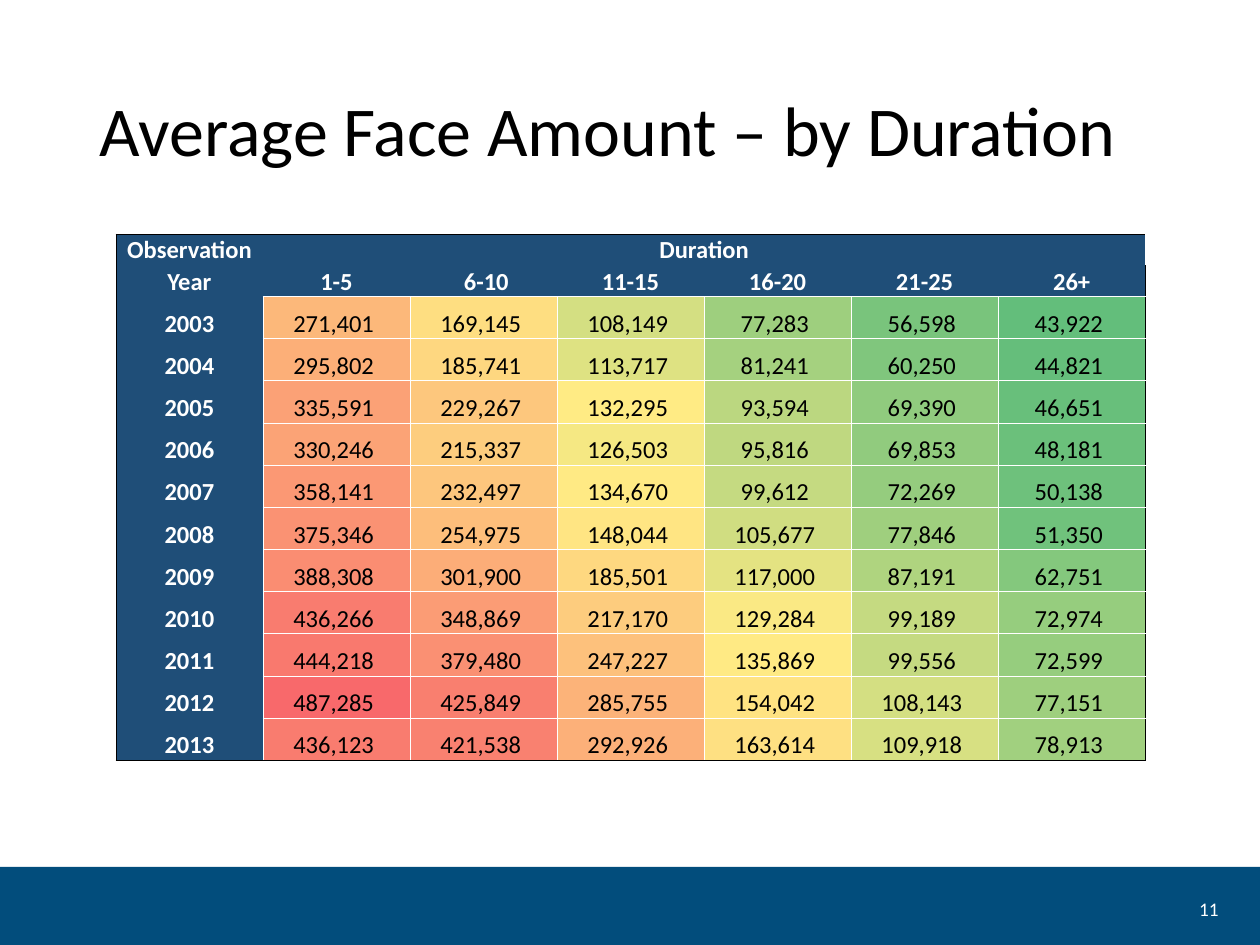
from lxml import etree
from pptx import Presentation
from pptx import util as u
from pptx.dml.color import RGBColor
from pptx.enum import shapes, text
from pptx.oxml.ns import qn

NAVY, BLACK, WHITE = "1F4E78", "000000", "FFFFFF"
# Colour scale for the amounts: lowest, middle and highest
LOW, MIDDLE, HIGH = (43922, "63BE7B"), (132295, "FFEB84"), (487285, "F8696B")
DURATIONS = ["1-5", " 6-10", "11-15", "16-20", "21-25", "26+"]
AMOUNTS = {
    2003: [271401, 169145, 108149, 77283, 56598, 43922],
    2004: [295802, 185741, 113717, 81241, 60250, 44821],
    2005: [335591, 229267, 132295, 93594, 69390, 46651],
    2006: [330246, 215337, 126503, 95816, 69853, 48181],
    2007: [358141, 232497, 134670, 99612, 72269, 50138],
    2008: [375346, 254975, 148044, 105677, 77846, 51350],
    2009: [388308, 301900, 185501, 117000, 87191, 62751],
    2010: [436266, 348869, 217170, 129284, 99189, 72974],
    2011: [444218, 379480, 247227, 135869, 99556, 72599],
    2012: [487285, 425849, 285755, 154042, 108143, 77151],
    2013: [436123, 421538, 292926, 163614, 109918, 78913],
}


def rgb(value):
    return RGBColor.from_string(value)


def heat_colour(amount):
    """Blend the colour scale's two stops on either side of the amount."""
    (start, first), (end, last) = (LOW, MIDDLE) if amount < MIDDLE[0] else (MIDDLE, HIGH)
    share = (amount - start) / (end - start)
    mixed = [round(a + (b - a) * share) for a, b in zip(rgb(first), rgb(last))]
    return str(RGBColor(*mixed))


presentation = Presentation()
presentation.slide_width, presentation.slide_height = u.Inches(10), u.Inches(7.5)
slide = presentation.slides.add_slide(presentation.slide_layouts[5])

# Footer band
band = slide.shapes.add_shape(
    shapes.MSO_SHAPE.RECTANGLE, 0, u.Inches(6.88), u.Inches(10), u.Inches(0.62))
band.shadow.inherit = False
band.fill.solid()
band.fill.fore_color.rgb = rgb("024D7C")
band.line.fill.background()

# Title
title = slide.shapes.title
title.left, title.top = u.Inches(0.69), u.Inches(0.36)
title.width, title.height = u.Inches(8.62), u.Inches(1.4)
title.text_frame.text = "Average Face Amount – by Duration"
title.text_frame.vertical_anchor = text.MSO_ANCHOR.MIDDLE
paragraph = title.text_frame.paragraphs[0]
paragraph.alignment = text.PP_ALIGN.LEFT
paragraph.line_spacing = 0.9
paragraph.font.size = u.Pt(40)
paragraph.font.name = "Calibri"
paragraph.font.color.rgb = rgb(BLACK)

# Table
rows = [["Observation", "Duration"] + [""] * 5, ["Year"] + DURATIONS]
rows += [[str(year)] + amounts for year, amounts in AMOUNTS.items()]
last_row, last_column = len(rows) - 1, len(DURATIONS)
table = slide.shapes.add_table(
    len(rows), last_column + 1,
    u.Inches(0.92), u.Inches(1.86), u.Inches(8.17), u.Inches(4.17)).table
for column in table.columns:
    column.width = u.Inches(8.17 / 7)
for r, row in enumerate(table.rows):
    row.height = u.Inches(0.23 if r < 2 else 0.335)
table.cell(0, 1).merge(table.cell(0, last_column))

for r, values in enumerate(rows):
    for c, value in enumerate(values):
        cell = table.cell(r, c)
        is_amount = r > 1 and c > 0
        cell.margin_left = cell.margin_right = cell.margin_top = u.Inches(0.01)
        cell.margin_bottom = 0
        cell.vertical_anchor = text.MSO_ANCHOR.BOTTOM

        # Black outline, white grid around the amounts, nothing inside the headers
        sides = {
            "lnL": (c == 0, is_amount),
            "lnR": (c == last_column, r > 1),
            "lnT": (r == 0, is_amount),
            "lnB": (r == last_row, is_amount or (r == 1 and c > 0)),
        }
        for tag, (on_outline, on_grid) in sides.items():
            border = etree.SubElement(cell._tc.get_or_add_tcPr(), qn(f"a:{tag}"), w=str(u.Pt(0.5)))
            if on_outline or on_grid:
                fill = etree.SubElement(border, qn("a:solidFill"))
                etree.SubElement(fill, qn("a:srgbClr"), val=BLACK if on_outline else WHITE)
            else:
                etree.SubElement(border, qn("a:noFill"))

        cell.fill.solid()
        cell.fill.fore_color.rgb = rgb(heat_colour(value) if is_amount else NAVY)
        cell.text_frame.text = f"{value:,} " if is_amount else value
        paragraph = cell.text_frame.paragraphs[0]
        paragraph.alignment = text.PP_ALIGN.CENTER
        paragraph.font.size = u.Pt(14)
        paragraph.font.name = "Calibri"
        paragraph.font.bold = not is_amount
        paragraph.font.color.rgb = rgb(BLACK if is_amount else WHITE)

# Slide number
number = slide.shapes.add_textbox(
    u.Inches(9.24), u.Inches(7.1), u.Inches(0.53), u.Inches(0.22))
number.text_frame.word_wrap = True
number.text_frame.vertical_anchor = text.MSO_ANCHOR.MIDDLE
number.text_frame.text = "11"
paragraph = number.text_frame.paragraphs[0]
paragraph.alignment = text.PP_ALIGN.RIGHT
paragraph.font.size = u.Pt(11)
paragraph.font.name = "Calibri"
paragraph.font.color.rgb = rgb(WHITE)

presentation.save("out.pptx")
